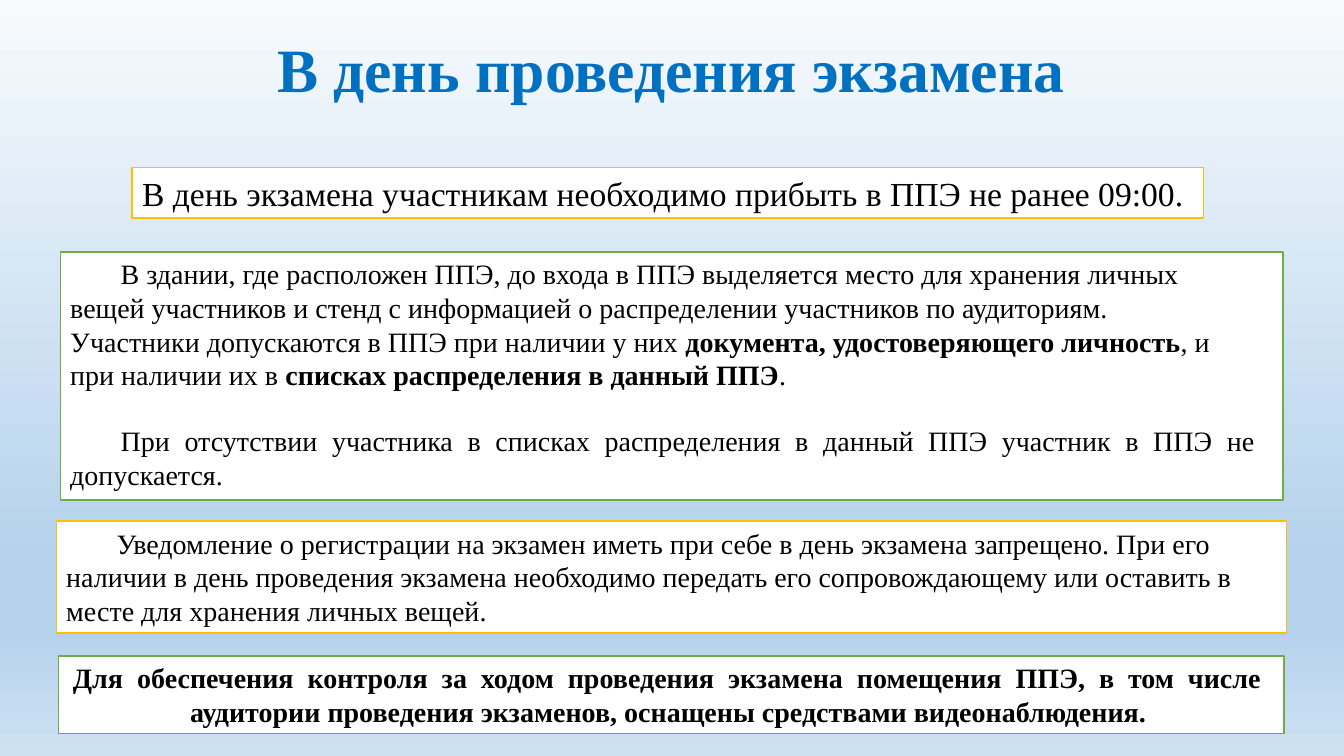
from copy import deepcopy
from dataclasses import dataclass

from pptx import Presentation
from pptx import util as u
from pptx.dml.color import RGBColor
from pptx.enum import shapes, text

COLORS: dict[str, str] = {
    "title": "0070C0",
    "text": "000000",
    "box": "FFFFFF",
    "gold": "FFC000",
    "green": "70AD47",
}
BACKGROUND: list[tuple[int, str]] = [
    (0, "F7FAFD"), (74, "B5D2EC"), (83, "B5D2EC"), (100, "CEE1F2"),
]
FONT = "Times New Roman"
LEFT = text.PP_ALIGN.LEFT
CENTER = text.PP_ALIGN.CENTER
JUSTIFY = text.PP_ALIGN.JUSTIFY


@dataclass(frozen=True)
class Line:
    phrases: tuple[str, ...]
    size: int = 20
    bold: bool = False
    color: str = "text"
    align: text.PP_ALIGN = LEFT
    before: int = 0
    spacing: float = 1.0
    hanging: float = 0


@dataclass(frozen=True)
class Box:
    left: float
    top: float
    width: float
    height: float
    outline: str
    lines: tuple[Line, ...]
    inset_left: float = 0.25
    inset_right: float = 0.25


TITLE = Line(("В день проведения экзамена",), 44, True, "title", CENTER, spacing=0.9)

BOXES: list[Box] = [
    Box(3.33, 4.22, 27, 1.28, "gold", (
        Line(("В день экзамена участникам необходимо прибыть в ППЭ не ранее 09:00.",), 24),
    )),
    Box(1.52, 6.35, 30.81, 6.25, "green", (
        Line(("\tВ здании, где расположен ППЭ, до входа в ППЭ выделяется место для хранения "
              "личных вещей участников и стенд с информацией о распределении участников "
              "по аудиториям.",)),
        Line(("Участники допускаются в ППЭ при наличии у них ",
              "документа, удостоверяющего личность", ", и")),
        Line(("при наличии их в ", "списках распределения в данный ППЭ", ".")),
        Line(("\tПри отсутствии участника в списках распределения в данный ППЭ участник "
              "в ППЭ не допускается.",), align=JUSTIFY, before=23),
    ), inset_right=0.69),
    Box(1.42, 13.13, 31.01, 2.82, "gold", (
        Line(("\tУведомление о регистрации на экзамен иметь при себе в день экзамена "
              "запрещено. При его наличии в день проведения экзамена необходимо передать "
              "его сопровождающему или оставить в месте для хранения личных вещей.",)),
    )),
    Box(1.47, 16.53, 30.89, 1.96, "green", (
        Line(("Для обеспечения контроля за ходом проведения экзамена помещения ППЭ, в том "
              "числе аудитории проведения экзаменов, оснащены средствами видеонаблюдения.",),
             bold=True, align=JUSTIFY, hanging=2.95),
    ), inset_left=0.37, inset_right=0.57),
]


def rgb(name: str) -> RGBColor:
    return RGBColor.from_string(COLORS[name])


def paint_background(slide) -> None:
    fill = slide.background.fill
    fill.gradient()
    fill.gradient_angle = 270
    stop_list = fill.gradient_stops[0]._gs.getparent()
    template = deepcopy(stop_list[0])
    for old_stop in list(stop_list):
        stop_list.remove(old_stop)
    for _ in BACKGROUND:
        stop_list.append(deepcopy(template))
    for stop, (position, color) in zip(fill.gradient_stops, BACKGROUND):
        stop.position = position / 100
        stop.color.rgb = RGBColor.from_string(color)


def write_line(paragraph, line: Line) -> None:
    paragraph.alignment = line.align
    paragraph.line_spacing = line.spacing
    paragraph.space_before = u.Pt(line.before)
    paragraph.font.name = FONT
    paragraph.font.size = u.Pt(line.size)
    paragraph.font.color.rgb = rgb(line.color)
    if len(line.phrases) == 1:
        paragraph.font.bold = line.bold
    if line.hanging:
        properties = paragraph._p.get_or_add_pPr()
        properties.set("marL", str(u.Cm(line.hanging)))
        properties.set("indent", str(-u.Cm(line.hanging)))
    for index, phrase in enumerate(line.phrases):
        run = paragraph.add_run()
        run.text = phrase
        if len(line.phrases) > 1:
            run.font.bold = index % 2 == 1


def add_title(slide) -> None:
    shape = slide.shapes.add_textbox(u.Cm(1.68), u.Cm(0.23), u.Cm(30.48), u.Cm(3.18))
    shape.text_frame.word_wrap = True
    shape.text_frame.vertical_anchor = text.MSO_ANCHOR.MIDDLE
    write_line(shape.text_frame.paragraphs[0], TITLE)


def add_box(slide, box: Box) -> None:
    shape = slide.shapes.add_shape(
        shapes.MSO_SHAPE.RECTANGLE,
        u.Cm(box.left), u.Cm(box.top), u.Cm(box.width), u.Cm(box.height),
    )
    shape.shadow.inherit = False
    shape.fill.solid()
    shape.fill.fore_color.rgb = rgb("box")
    shape.line.color.rgb = rgb(box.outline)
    shape.line.width = u.Pt(1)
    frame = shape.text_frame
    frame.word_wrap = True
    frame.vertical_anchor = text.MSO_ANCHOR.TOP
    frame.margin_left = u.Cm(box.inset_left)
    frame.margin_right = u.Cm(box.inset_right)
    for index, line in enumerate(box.lines):
        write_line(frame.add_paragraph() if index else frame.paragraphs[0], line)


def main() -> None:
    presentation = Presentation()
    presentation.slide_width = u.Cm(33.87)
    presentation.slide_height = u.Cm(19.05)
    slide = presentation.slides.add_slide(presentation.slide_layouts[6])
    paint_background(slide)
    add_title(slide)
    for box in BOXES:
        add_box(slide, box)
    presentation.save("out.pptx")


if __name__ == "__main__":
    main()
